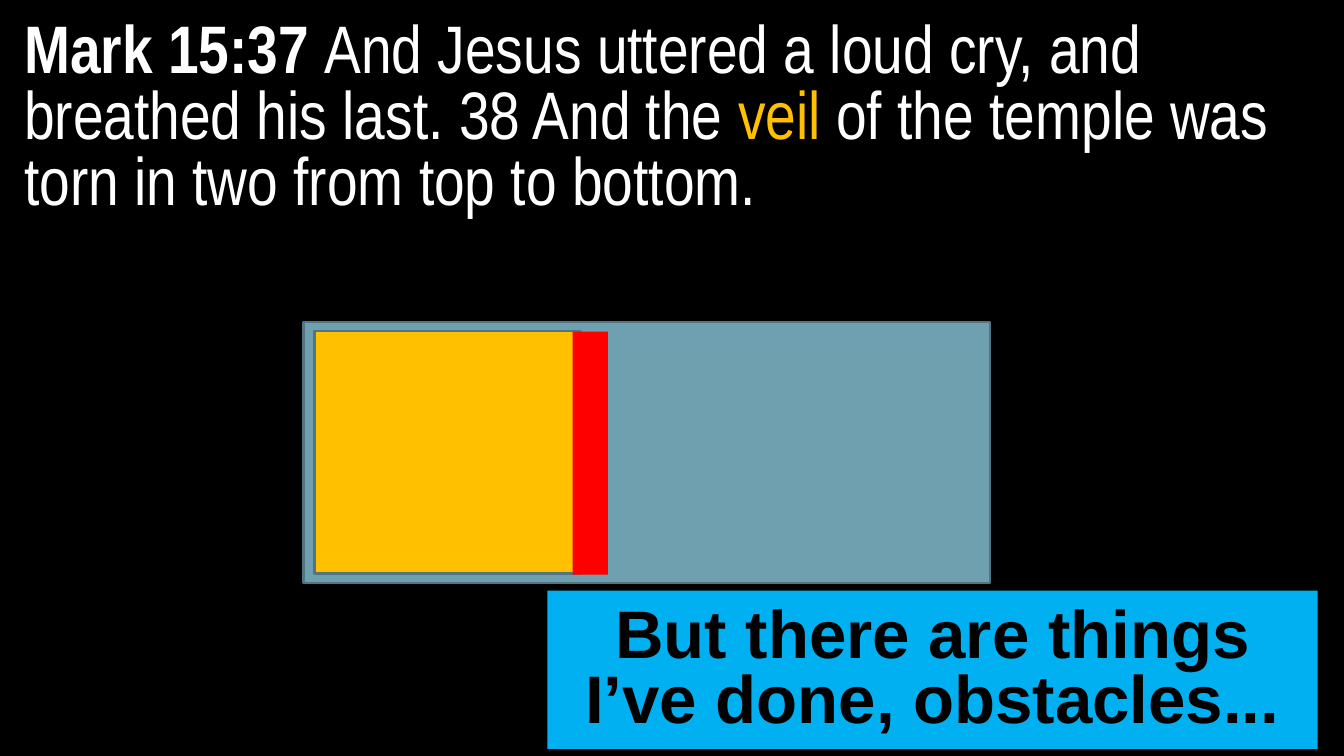
from pptx import Presentation
from pptx.dml.color import RGBColor
from pptx.enum.shapes import MSO_SHAPE
from pptx.enum.text import MSO_ANCHOR, PP_ALIGN
from pptx.util import Inches, Pt

COLORS = {
    "black": "000000",
    "white": "FFFFFF",
    "gold": "FFC000",
    "temple": "6EA0B0",
    "outline": "517682",
    "red": "FF0000",
    "blue": "00B0F0",
}


def add_run(p, text, color="white", font="Arial Narrow", size=48, bold=False):
    r = p.add_run()
    r.text = text
    r.font.name = font
    r.font.size = Pt(size)
    r.font.bold = bold
    r.font.color.rgb = RGBColor.from_string(COLORS[color])


prs = Presentation()
prs.slide_width = Inches(13.33)
prs.slide_height = Inches(7.5)
slide = prs.slides.add_slide(prs.slide_layouts[6])
slide.background.fill.solid()
slide.background.fill.fore_color.rgb = RGBColor.from_string(COLORS["black"])

verse = slide.shapes.add_textbox(Inches(0.11), Inches(0.16), Inches(13.03), Inches(7.18))
tf = verse.text_frame
tf.word_wrap = True
tf.margin_left = Inches(0.13)
p = tf.paragraphs[0]
p.line_spacing = Pt(47)
p.space_after = Pt(18)
add_run(p, "Mark 15:37 ", bold=True)
add_run(p, "And Jesus uttered a loud cry, and breathed his last. 38 And the ")
add_run(p, "veil", color="gold")
add_run(p, " of the temple was torn in two from top to bottom.")

boxes = [
    (3.01, 3.19, 6.81, 2.59, "temple", "outline"),
    (3.12, 3.28, 2.64, 2.41, "gold", "outline"),
    (5.68, 3.29, 0.35, 2.41, "red", None),
    (5.43, 5.86, 7.64, 1.57, "blue", None),
]
for left, top, width, height, fill, line in boxes:
    sp = slide.shapes.add_shape(
        MSO_SHAPE.RECTANGLE, Inches(left), Inches(top), Inches(width), Inches(height)
    )
    sp.shadow.inherit = False
    sp.fill.solid()
    sp.fill.fore_color.rgb = RGBColor.from_string(COLORS[fill])
    if line:
        sp.line.color.rgb = RGBColor.from_string(COLORS[line])
        sp.line.width = Pt(1.5)
    else:
        sp.line.fill.background()

tf = sp.text_frame
tf.word_wrap = True
tf.vertical_anchor = MSO_ANCHOR.TOP
tf.margin_left = tf.margin_right = tf.margin_bottom = Inches(0.05)
tf.margin_top = Inches(0.15)
p = tf.paragraphs[0]
p.alignment = PP_ALIGN.CENTER
p.line_spacing = Pt(47)
p.space_after = Pt(12)
add_run(p, "But there are things I’ve done, obstacles...", color="black", font="Arial", bold=True)

prs.save("out.pptx")
